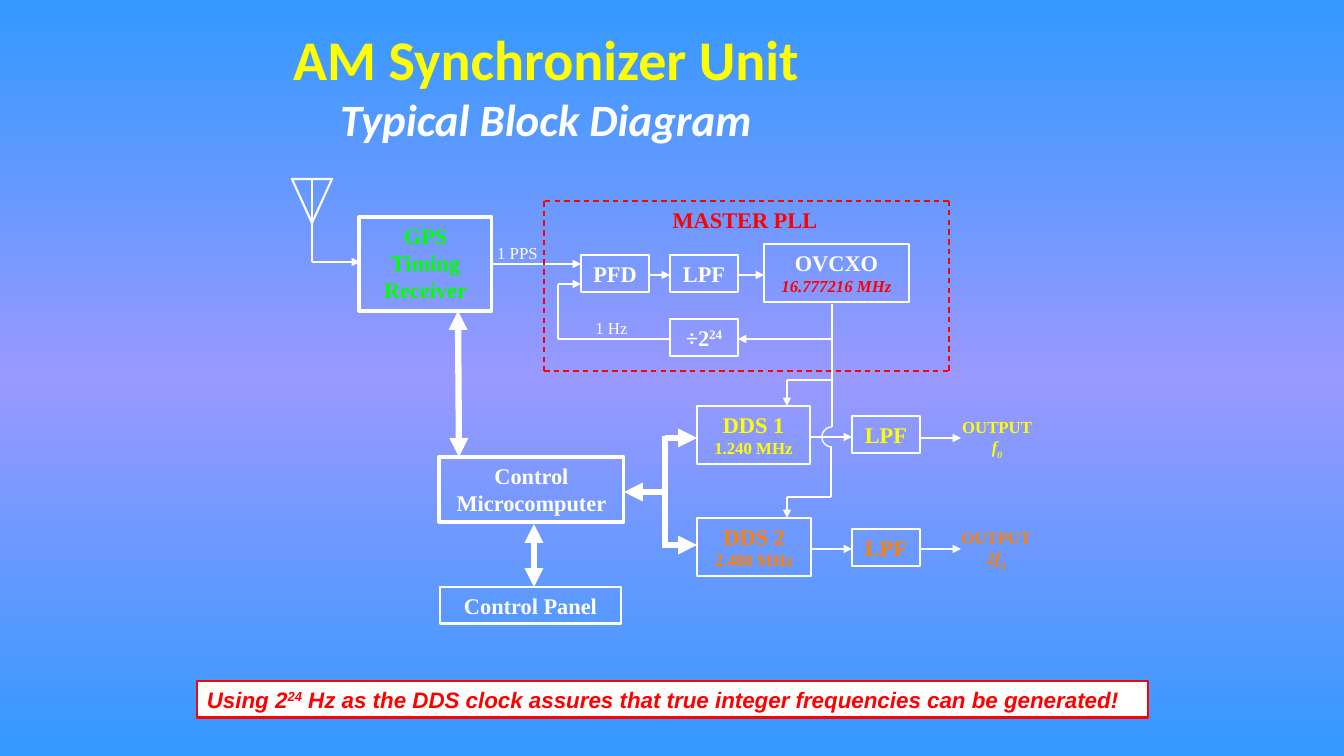
import copy
import math

import pptx
import pptx.dml.color
import pptx.enum.dml
import pptx.enum.shapes
import pptx.enum.text
import pptx.oxml
import pptx.util

PX = 914400 / 100.8
SHAPE = pptx.enum.shapes.MSO_SHAPE
ALIGN = pptx.enum.text.PP_ALIGN
ANCHOR = pptx.enum.text.MSO_ANCHOR
FIT = pptx.enum.text.MSO_AUTO_SIZE
WHITE, RED, YELLOW, ORANGE, GREEN = "FFFFFF", "FF0000", "FFFF00", "FF8000", "00FF00"


def rgb(value):
    return pptx.dml.color.RGBColor.from_string(value)


def write(frame, spans, align=ALIGN.CENTER, anchor=ANCHOR.TOP, fit=FIT.SHAPE_TO_FIT_TEXT):
    """Fill one paragraph; each span's format carries over to the next span."""
    frame.word_wrap = True
    frame.vertical_anchor = anchor
    frame.auto_size = fit
    para = frame.paragraphs[0]
    para.alignment = align
    style = {"name": "Times New Roman", "size": 16, "bold": True, "italic": False}
    for text, changes in spans:
        style.update(changes)
        if text == "\n":
            para.add_line_break()
            continue
        span = para.add_run()
        span.text = text
        for key in ("name", "bold", "italic"):
            setattr(span.font, key, style[key])
        span.font.size = pptx.util.Pt(style["size"])
        span.font.color.rgb = rgb(style["color"])
        if style.get("baseline"):
            span.font._element.set("baseline", str(style["baseline"] * 1000))


deck = pptx.Presentation()
deck.slide_width, deck.slide_height = round(1344 * PX), round(756 * PX)
page = deck.slides.add_slide(deck.slide_layouts[5])

background = page.background.fill
background.gradient()
background.gradient_angle = 90
stop_list = page._element.xpath(".//a:gsLst")[0]
stop_list.insert(1, copy.deepcopy(stop_list[0]))
for stop, position, color in zip(background.gradient_stops, (0, 0.5, 1), ("3399FF", "9999FF", "3399FF")):
    stop.position = position
    stop.color.rgb = rgb(color)

title = page.shapes.title
title.left, title.top, title.width, title.height = [round(n * PX) for n in (0, 25, 1092, 126)]
write(title.text_frame, [
    ("AM Synchronizer Unit", {"name": "Calibri", "size": 40, "color": YELLOW}),
    ("\n", {}),
    ("Typical Block Diagram", {"size": 32, "color": WHITE, "italic": True}),
], anchor=ANCHOR.BOTTOM, fit=FIT.NONE)

# Blocks: left, top, width, height, line width, spans
blocks = [
    (359, 217, 133, 94, 2.25, [("GPS Timing Receiver", {"color": GREEN})]),
    (764, 244, 145, 58, 2, [("OVCXO ", {"color": WHITE}),
                            ("16.777216 MHz", {"size": 12, "color": RED, "italic": True})]),
    (697, 406, 113, 58, 2, [("DDS 1 ", {"color": YELLOW}), ("1.240 MHz", {"size": 12})]),
    (697, 518, 114, 58, 2, [("DDS 2 ", {"color": ORANGE}), ("2.480 MHz", {"size": 12})]),
    (439, 457, 185, 65, 2.25, [("Control Microcomputer", {"color": WHITE})]),
    (440, 587, 181, 37, 2, [("Control Panel", {"color": WHITE})]),
    (670, 319, 68, 37, 1.5, [("÷2", {"color": WHITE}), ("24", {"baseline": 30})]),
]
for left, top, name, color in [(581, 255, "PFD", WHITE), (670, 255, "LPF", WHITE),
                               (852, 416, "LPF", YELLOW), (852, 529, "LPF", ORANGE)]:
    blocks.append((left, top, 68, 37, 1.5, [(name, {"color": color})]))
for left, top, width, height, weight, spans in blocks:
    block = page.shapes.add_shape(SHAPE.RECTANGLE, *[round(n * PX) for n in (left, top, width, height)])
    block.shadow.inherit = False
    block.fill.background()
    block.line.color.rgb = rgb(WHITE)
    block.line.width = pptx.util.Pt(weight)
    write(block.text_frame, spans)

antenna = page.shapes.add_shape(SHAPE.ISOSCELES_TRIANGLE, *[round(n * PX) for n in (292, 179, 40, 44)])
antenna._element.spPr.xfrm.set("flipV", "1")
antenna.shadow.inherit = False
antenna.fill.background()
antenna.line.color.rgb = rgb(WHITE)
antenna.line.width = pptx.util.Pt(1.5)

# Routes: line width, arrowheads at the ends, corner points
routes = [
    (1.5, "tail", [(312, 178), (312, 262), (360, 262)]),
    (1, "tail", [(492, 264), (581, 264)]),
    (1, "tail", [(649, 275), (670, 275)]),
    (1, "tail", [(738, 275), (764, 275)]),
    (1, "tail", [(670, 339), (558, 339), (558, 284), (581, 284)]),
    (1, "tail", [(832, 339), (738, 339)]),
    (1.5, "tail", [(810, 437), (852, 437)]),
    (1.5, "tail", [(811, 549), (852, 549)]),
    (1.5, "tail", [(920, 438), (961, 438)]),
    (1.5, "tail", [(920, 549), (961, 549)]),
    (4.5, "head", [(624, 492), (665, 492)]),
    (4.5, "head tail", [(458, 311), (459, 457)]),
    (4.5, "head tail", [(534, 524), (534, 587)]),
    (4.5, "", [(665, 436), (665, 548)]),
    (4.5, "tail", [(665, 438), (697, 438)]),
    (4.5, "tail", [(665, 545), (697, 545)]),
    (1, "", [(832, 304), (832, 380), (832, 427)]),
    (1, "tail", [(832, 380), (787, 380), (787, 406)]),
    (1, "tail", [(831, 447), (831, 497), (787, 497), (787, 518)]),
    (1, "dash", [(544, 201), (544, 371), (949, 371), (949, 201), (544, 201)]),
]
for weight, ends, points in routes:
    legs = list(zip(points, points[1:]))
    for index, (start, end) in enumerate(legs):
        leg = page.shapes.add_connector(pptx.enum.shapes.MSO_CONNECTOR.STRAIGHT,
                                        *[round(n * PX) for n in start + end])
        leg.line.color.rgb = rgb(RED if ends == "dash" else WHITE)
        leg.line.width = pptx.util.Pt(weight)
        if ends == "dash":
            leg.line.dash_style = pptx.enum.dml.MSO_LINE.DASH
        for end_name, end_index in (("head", 0), ("tail", len(legs) - 1)):
            if end_name in ends and index == end_index:
                arrow = pptx.oxml.parse_xml(
                    f'<a:{end_name}End xmlns:a="http://schemas.openxmlformats.org/drawingml/2006/main"'
                    ' type="triangle"/>')
                leg.line._get_or_add_ln().append(arrow)
        leg._element.spPr.append(pptx.oxml.parse_xml(
            '<a:effectLst xmlns:a="http://schemas.openxmlformats.org/drawingml/2006/main"/>'))

# Clock line hops over the DDS 1 output in two quarter circles
for first_angle in (90, 180):
    arc = [(832 + 10 * math.cos(math.radians(angle)), 437 + 10 * math.sin(math.radians(angle)))
           for angle in range(first_angle, first_angle + 91, 10)]
    builder = page.shapes.build_freeform(*[round(n * PX) for n in arc[0]])
    builder.add_line_segments([(round(x * PX), round(y * PX)) for x, y in arc[1:]], close=False)
    hop = builder.convert_to_shape()
    hop.shadow.inherit = False
    hop.fill.background()
    hop.line.color.rgb = rgb(WHITE)
    hop.line.width = pptx.util.Pt(1)

plain = {"size": 12, "bold": False, "color": WHITE}
labels = [
    (481, 238, 73, 30, [("1 PPS", plain)]),
    (583, 313, 57, 30, [("1 Hz", plain)]),
    (659, 201, 172, 37, [("MASTER PLL", {"color": RED})]),
]
for left, top, text, color in [(950, 412, "OUTPUT ", YELLOW), (949, 523, "OUTPUT 2", ORANGE)]:
    labels.append((left, top, 94, 50, [(text, {"size": 12, "color": color}),
                                       ("f", {"italic": True}), ("0", {"baseline": -25})]))
for left, top, width, height, spans in labels:
    label = page.shapes.add_textbox(*[round(n * PX) for n in (left, top, width, height)])
    write(label.text_frame, spans)

note = page.shapes.add_shape(SHAPE.RECTANGLE, *[round(n * PX) for n in (197, 681, 951, 37)])
note.shadow.inherit = False
note.fill.solid()
note.fill.fore_color.rgb = rgb(WHITE)
note.line.color.rgb = rgb(RED)
note.line.width = pptx.util.Pt(2)
write(note.text_frame, [
    ("Using 2", {"name": "Arial", "italic": True, "color": RED}),
    ("24", {"baseline": 30}),
    (" Hz as the DDS clock assures that true integer frequencies can be generated!", {"baseline": 0}),
], align=ALIGN.LEFT)

deck.save("out.pptx")
